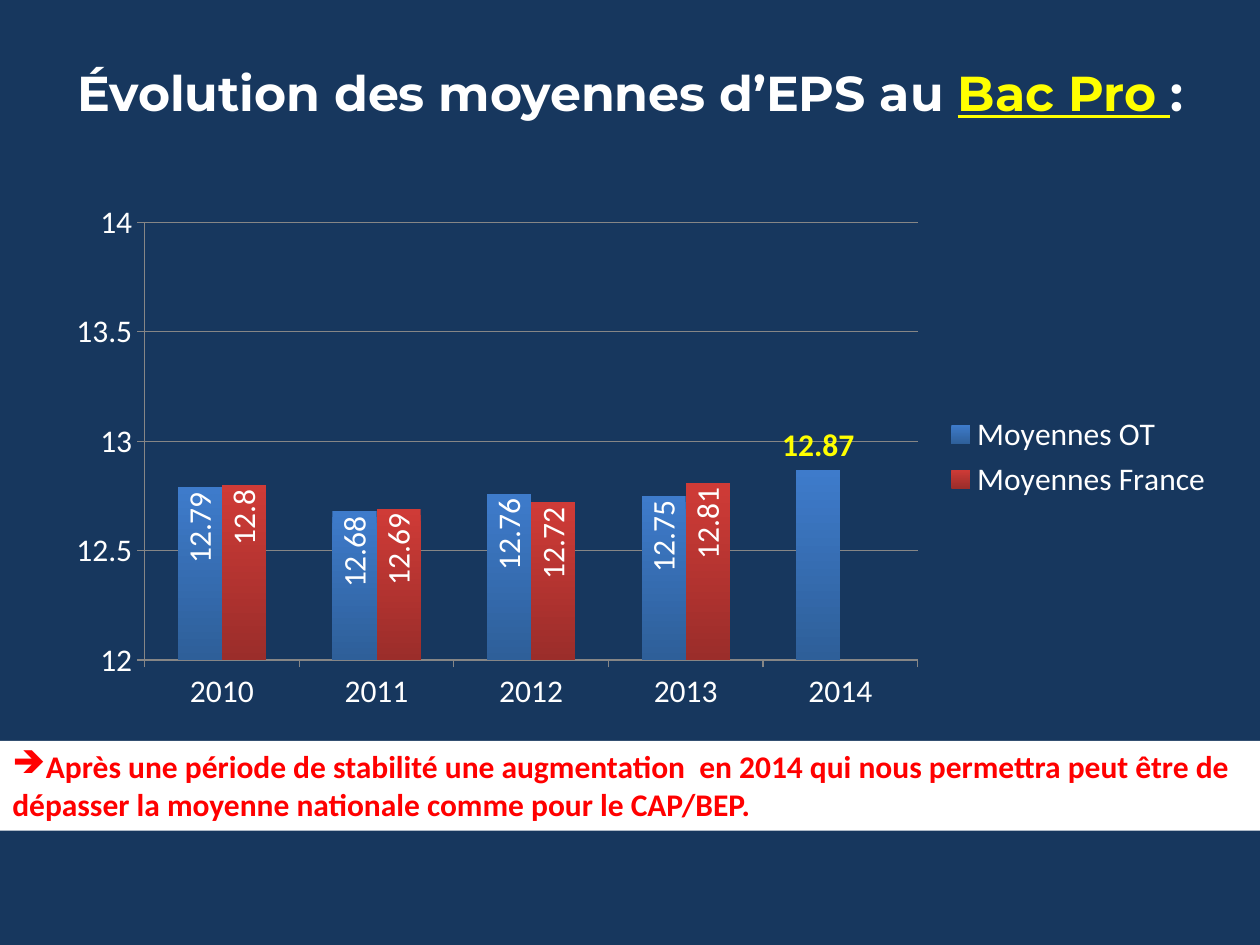
from lxml import etree
from pptx import Presentation
from pptx import util as u
from pptx.chart.data import CategoryChartData
from pptx.dml.color import RGBColor
from pptx.enum import chart as ch, shapes, text
from pptx.oxml.ns import qn

COLORS = {
    "navy": "17375E", "white": "FFFFFF", "yellow": "FFFF00", "red": "FF0000",
    "grid": "868686", "blue_top": "3E7BCB", "blue_base": "2E5F99",
    "red_top": "CF3B37", "red_base": "9B2D2A",
}
WIDTH, HEIGHT = u.Inches(10), u.Inches(7.5)
YEARS = ["2010", "2011", "2012", "2013", "2014"]
AVERAGES = {
    "Moyennes OT": ([12.79, 12.68, 12.76, 12.75, 12.87], "blue"),
    "Moyennes France": ([12.8, 12.69, 12.72, 12.81, None], "red"),
}


def rgb(name):
    return RGBColor.from_string(COLORS[name])


def share(left, top, width, height):
    return (int(WIDTH * left), int(HEIGHT * top),
            int(WIDTH * width), int(HEIGHT * height))


def style(font, size, color, face="Calibri", bold=False):
    font.name, font.size, font.bold = face, u.Pt(size), bold
    font.color.rgb = rgb(color)


def add_heading(slide, box):
    heading = slide.shapes.title
    heading.left, heading.top, heading.width, heading.height = box
    heading.text_frame.vertical_anchor = text.MSO_ANCHOR.MIDDLE
    line = heading.text_frame.paragraphs[0]
    line.alignment = text.PP_ALIGN.CENTER
    for words, color, underlined in (
        ("Évolution des moyennes d’EPS au ", "white", False),
        ("Bac Pro ", "yellow", True),
        (":", "white", False),
    ):
        run = line.add_run()
        run.text = words
        style(run.font, 28, color, "Montserrat", True)
        run.font.underline = underlined


def format_axis(axis):
    style(axis.tick_labels.font, 18, "white")
    axis.major_tick_mark = ch.XL_TICK_MARK.OUTSIDE
    axis.minor_tick_mark = ch.XL_TICK_MARK.NONE
    axis.format.line.color.rgb = rgb("grid")
    axis.format.line.width = u.Pt(0.75)


def format_series(series, hue):
    fill = series.format.fill
    fill.gradient()
    fill.gradient_angle = 270
    for stop, end in zip(fill.gradient_stops, ("top", "base")):
        stop.color.rgb = rgb(f"{hue}_{end}")
    series.format.line.fill.background()
    labels = series.data_labels
    labels.show_value = True
    labels.position = ch.XL_LABEL_POSITION.INSIDE_END
    style(labels.font, 18, "white")
    body = labels._element.find(qn("c:txPr")).find(qn("a:bodyPr"))
    body.set("rot", "-5400000")
    body.set("vert", "horz")


def add_averages_chart(slide, box):
    data = CategoryChartData()
    data.categories = YEARS
    for name, (values, _) in AVERAGES.items():
        data.add_series(name, values)
    chart = slide.shapes.add_chart(
        ch.XL_CHART_TYPE.COLUMN_CLUSTERED, *box, data).chart
    chart.has_title = False
    style(chart.font, 18, "white")
    chart.has_legend = True
    chart.legend.position = ch.XL_LEGEND_POSITION.RIGHT
    chart.legend.include_in_layout = False
    style(chart.legend.font, 18, "white")

    marks = chart.value_axis
    marks.minimum_scale, marks.maximum_scale, marks.major_unit = 12, 14, 0.5
    marks.has_major_gridlines = True
    marks.major_gridlines.format.line.color.rgb = rgb("grid")
    marks.major_gridlines.format.line.width = u.Pt(0.75)
    for axis in (marks, chart.category_axis):
        format_axis(axis)

    plot = chart.plots[0]
    plot.gap_width, plot.overlap, plot.vary_by_categories = 150, 0, False
    for series, (_, hue) in zip(plot.series, AVERAGES.values()):
        format_series(series, hue)
    latest = plot.series[0].points[len(YEARS) - 1].data_label
    style(latest.font, 18, "yellow", bold=True)
    latest.position = ch.XL_LABEL_POSITION.OUTSIDE_END
    body = latest._dLbl.find(qn("c:txPr")).find(qn("a:bodyPr"))
    body.set("rot", "0")


def add_conclusion(slide, box):
    band = slide.shapes.add_shape(shapes.MSO_SHAPE.RECTANGLE, *box)
    band.shadow.inherit = False
    band.fill.solid()
    band.fill.fore_color.rgb = rgb("white")
    band.line.fill.background()
    frame = band.text_frame
    frame.word_wrap = True
    frame.auto_size = text.MSO_AUTO_SIZE.SHAPE_TO_FIT_TEXT
    frame.vertical_anchor = text.MSO_ANCHOR.TOP
    remark = frame.paragraphs[0]
    remark.alignment = text.PP_ALIGN.LEFT
    remark.space_after = u.Pt(6)
    bullet = etree.SubElement(remark._p.get_or_add_pPr(), qn("a:buChar"))
    bullet.set("char", "➔")
    run = remark.add_run()
    run.text = ("Après une période de stabilité une augmentation  en 2014 "
                "qui nous permettra peut être de dépasser la moyenne "
                "nationale comme pour le CAP/BEP.")
    style(run.font, 18, "red", bold=True)


def main():
    deck = Presentation()
    deck.slide_width, deck.slide_height = WIDTH, HEIGHT
    slide = deck.slides.add_slide(deck.slide_layouts[5])
    slide.background.fill.solid()
    slide.background.fill.fore_color.rgb = rgb("navy")
    add_heading(slide, share(0, 0, 1, 0.195))
    add_conclusion(slide, share(0, 0.784, 1, 0.095))
    add_averages_chart(slide, share(0.042, 0.204, 0.931, 0.559))
    deck.save("out.pptx")


if __name__ == "__main__":
    main()
